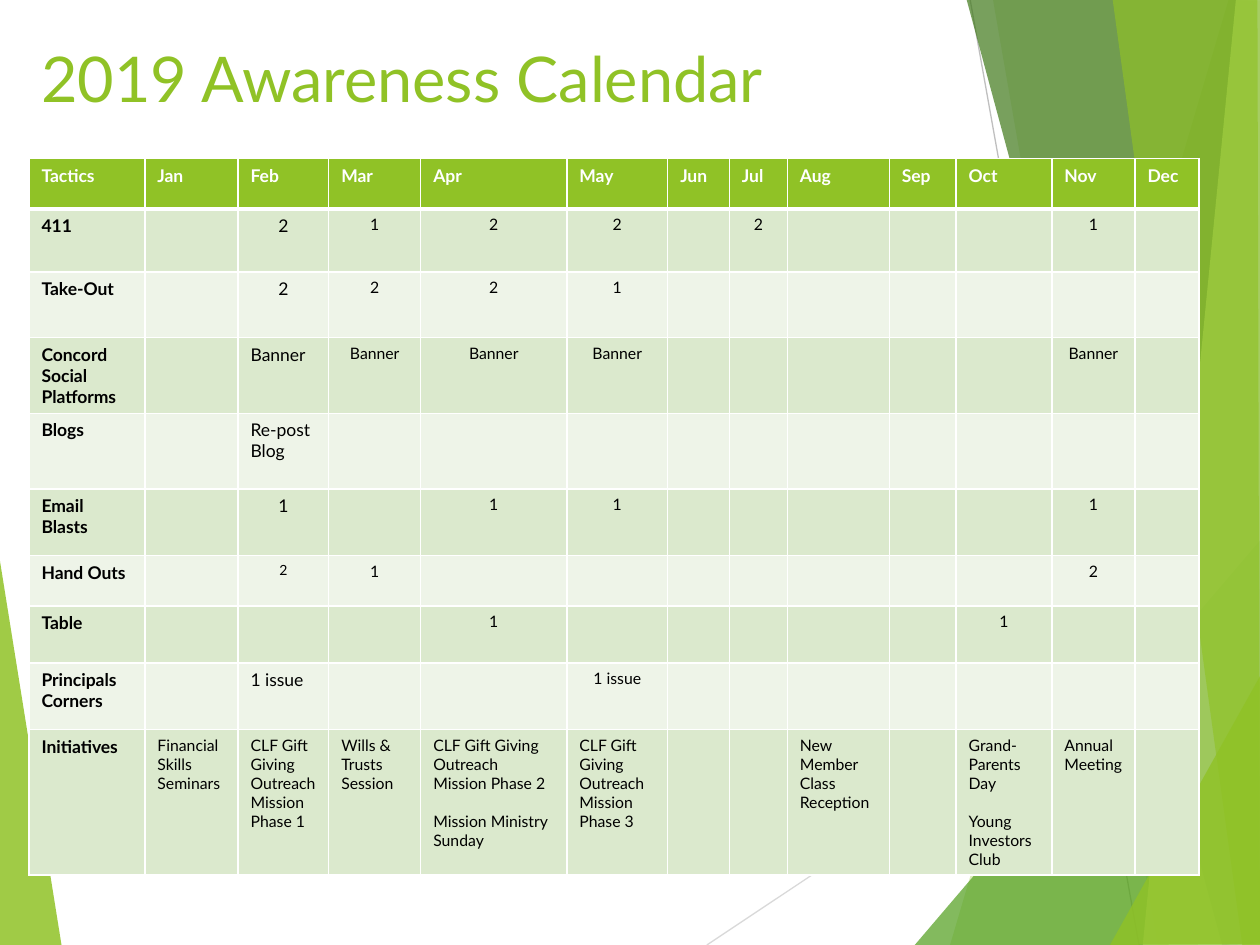
from lxml import etree
from pptx import Presentation
from pptx.dml.color import RGBColor
from pptx.enum.shapes import MSO_CONNECTOR
from pptx.enum.text import MSO_ANCHOR, PP_ALIGN
from pptx.oxml.ns import qn
from pptx.util import Inches, Pt

STRAIGHT = MSO_CONNECTOR.STRAIGHT
MIDDLE = MSO_ANCHOR.MIDDLE
LEFT, CENTER = PP_ALIGN.LEFT, PP_ALIGN.CENTER

FONT = "Lato"
GREEN = RGBColor(0x90, 0xC2, 0x26)
MID_GREEN = RGBColor(0x54, 0xA0, 0x21)
DARK_GREEN = RGBColor(0x3F, 0x78, 0x19)
LIME = RGBColor(0xC0, 0xE4, 0x74)
BAND_DARK = RGBColor(0xDB, 0xE9, 0xCD)
BAND_LIGHT = RGBColor(0xEE, 0xF4, 0xE8)
LIGHT_GRAY = RGBColor(0xD9, 0xD9, 0xD9)
GRAY = RGBColor(0xBF, 0xBF, 0xBF)
WHITE = RGBColor(0xFF, 0xFF, 0xFF)
BLACK = RGBColor(0x00, 0x00, 0x00)

LEFT_FACET = ([(-0.01, 4.39), (0.49, 7.51), (-0.01, 7.5)], GREEN, 85)
RIGHT_FACETS = [
    ([(9.75, 0), (7.54, 7.5), (10.02, 7.51), (10.01, 0.01)], GREEN, 30),
    ([(7.88, -0.01), (9.19, 7.5), (10.01, 7.5), (10.01, -0.01)], GREEN, 20),
    ([(7.26, 7.5), (10, 4.29), (10.01, 7.5)], MID_GREEN, 72),
    ([(7.67, -0.01), (9.7, 7.5), (10.01, 7.49), (10.01, -0.01)], DARK_GREEN, 70),
    ([(9.81, -0.01), (9.07, 7.5), (10.01, 7.5), (10, -0.01)], LIME, 70),
    ([(8.83, -0.01), (9.86, 7.5), (10, 7.5), (9.98, -0.01)], GREEN, 65),
    ([(8.81, 7.5), (10.01, 5.35), (10.01, 7.49)], GREEN, 80),
]
LINES = [((5.61, 7.5), (10.01, 4.57), LIGHT_GRAY), ((7.7, 0), (9.04, 7.5), GRAY)]

COLUMNS = {
    "Tactics": 0.92, "Jan": 0.74, "Feb": 0.72, "Mar": 0.73, "Apr": 1.16,
    "May": 0.8, "Jun": 0.49, "Jul": 0.46, "Aug": 0.81, "Sep": 0.53,
    "Oct": 0.76, "Nov": 0.66, "Dec": 0.51,
}
HEADER_HEIGHT = 0.4
TACTICS = [
    ("411", 0.5, {"Feb": "2", "Mar": "1", "Apr": "2", "May": "2", "Jul": "2", "Nov": "1"}),
    ("Take-Out", 0.52, {"Feb": "2", "Mar": "2", "Apr": "2", "May": "1"}),
    ("Concord Social Platforms", 0.6,
     dict.fromkeys(["Feb", "Mar", "Apr", "May", "Nov"], "Banner")),
    ("Blogs", 0.6, {"Feb": "Re-post Blog"}),
    ("Email Blasts", 0.53, {"Feb": "1", "Apr": "1", "May": "1", "Nov": "1"}),
    ("Hand Outs", 0.4, {"Feb": "2", "Mar": "1", "Nov": "2"}),
    ("Table", 0.45, {"Apr": "1", "Oct": "1"}),
    ("Principals Corners", 0.53, {"Feb": "1 issue", "May": "1 issue"}),
    ("Initiatives", 1.15, {
        "Jan": "Financial Skills Seminars",
        "Feb": "CLF Gift Giving Outreach\nMission Phase 1",
        "Mar": "Wills & Trusts Session",
        "Apr": "CLF Gift Giving Outreach\nMission Phase 2\nMission Ministry Sunday",
        "May": "CLF Gift Giving Outreach\nMission Phase 3",
        "Aug": "New Member Class Reception",
        "Oct": "Grand-Parents Day\nYoung Investors Club",
        "Nov": "Annual Meeting",
    }),
]
SPACED_LINES = {"Mission Ministry Sunday", "Young Investors Club"}
FEB_SIZES = {"Hand Outs": 8, "Initiatives": 9}


def set_font(p, size, color, bold=False):
    """Give a paragraph its font."""
    p.font.name, p.font.size, p.font.bold = FONT, Pt(size), bold
    p.font.color.rgb = color


def add_facet(slide, x, y, points, color, opacity):
    """Draw one translucent polygon offset by x and y."""
    spots = [(x + Inches(px), y + Inches(py)) for px, py in points]
    builder = slide.shapes.build_freeform(*spots[0])
    builder.add_line_segments(spots[1:], close=True)
    sp = builder.convert_to_shape()
    sp.shadow.inherit = False
    sp.line.fill.background()
    sp.fill.solid()
    sp.fill.fore_color.rgb = color
    srgb = sp.fill._xPr.find(qn("a:solidFill")).find(qn("a:srgbClr"))
    etree.SubElement(srgb, qn("a:alpha"), val=str(opacity * 1000))


def add_backdrop(slide, x, y):
    """Draw the facets and thin lines behind the content."""
    add_facet(slide, x, y, *LEFT_FACET)
    for (x1, y1), (x2, y2), color in LINES:
        line = slide.shapes.add_connector(
            STRAIGHT, x + Inches(x1), y + Inches(y1), x + Inches(x2), y + Inches(y2))
        line.line.color.rgb = color
        line.line.width = Pt(0.75)
        etree.SubElement(line._element.spPr, qn("a:effectLst"))
    for facet in RIGHT_FACETS:
        add_facet(slide, x, y, *facet)


def add_title(slide, x, y, w, h):
    """Place the slide title."""
    tf = slide.shapes.add_textbox(x, y, w, h).text_frame
    tf.word_wrap = True
    tf.vertical_anchor = MIDDLE
    p = tf.paragraphs[0]
    p.text = "2019 Awareness Calendar"
    set_font(p, 36, GREEN)


def fill_cell(cell, text, fill, size, color=BLACK, bold=False, align=LEFT):
    """Fill a table cell with its colour and styled paragraphs."""
    cell.fill.solid()
    cell.fill.fore_color.rgb = fill
    cell.text_frame.text = text
    for p in cell.text_frame.paragraphs:
        set_font(p, size, color, bold)
        p.alignment = align
        if p.text in SPACED_LINES:
            p.space_before = Pt(11)


def underline_cell(cell, color, width):
    """Give a cell a bottom border."""
    border = etree.Element(qn("a:lnB"), w=str(Pt(width)))
    solid = etree.SubElement(border, qn("a:solidFill"))
    etree.SubElement(solid, qn("a:srgbClr"), val=str(color))
    cell._tc.get_or_add_tcPr().insert(0, border)


def add_calendar(slide, x, y, w, h):
    """Build the table of tactics by month."""
    table = slide.shapes.add_table(len(TACTICS) + 1, len(COLUMNS), x, y, w, h).table
    table.rows[0].height = Inches(HEADER_HEIGHT)
    for c, (name, width) in enumerate(COLUMNS.items()):
        table.columns[c].width = Inches(width)
        fill_cell(table.cell(0, c), name, GREEN, 10, WHITE, True)
        underline_cell(table.cell(0, c), WHITE, 3)
    for r, (tactic, height, entries) in enumerate(TACTICS, 1):
        table.rows[r].height = Inches(height)
        fill = BAND_DARK if r % 2 else BAND_LIGHT
        fill_cell(table.cell(r, 0), tactic, fill, 10, bold=True)
        for c, month in enumerate(list(COLUMNS)[1:], 1):
            text = entries.get(month, "")
            size = FEB_SIZES.get(tactic, 10) if month == "Feb" else 9
            wordy = tactic == "Initiatives" or month == "Feb" and not text.isdigit()
            fill_cell(table.cell(r, c), text, fill, size, align=LEFT if wordy else CENTER)


def main():
    """Build and save the slide."""
    prs = Presentation()
    prs.slide_width, prs.slide_height = Inches(10), Inches(7.5)
    slide = prs.slides.add_slide(prs.slide_layouts[6])
    add_backdrop(slide, Inches(0), Inches(0))
    add_title(slide, Inches(0.23), Inches(0.22), Inches(9), Inches(0.78))
    add_calendar(slide, Inches(0.23), Inches(1.26), Inches(9.29), Inches(5.68))
    prs.save("out.pptx")


if __name__ == "__main__":
    main()
